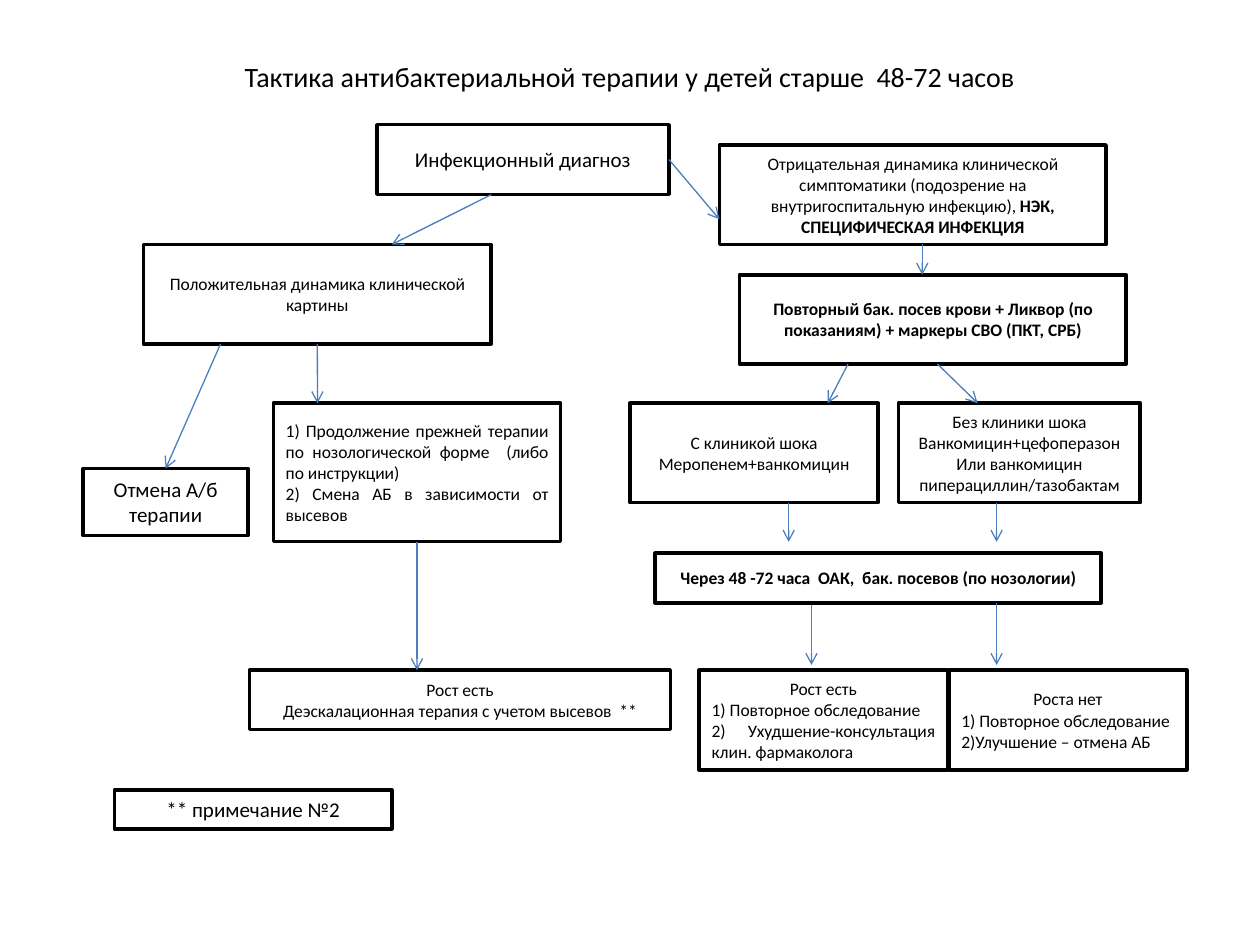
import pptx
import pptx.dml.color
import pptx.enum.shapes
import pptx.enum.text
import pptx.oxml.ns
import pptx.util
from lxml import etree

Pt = pptx.util.Pt
ALIGN = pptx.enum.text.PP_ALIGN
MIDDLE = pptx.enum.text.MSO_ANCHOR.MIDDLE
BLACK = pptx.dml.color.RGBColor(0x00, 0x00, 0x00)
WHITE = pptx.dml.color.RGBColor(0xFF, 0xFF, 0xFF)
BLUE = pptx.dml.color.RGBColor(0x4B, 0x7E, 0xBC)
FONT = "Calibri"
BODY, LARGE = 10, 12
TOP, LEFT, BOTTOM, RIGHT = range(4)

TITLE = "Тактика антибактериальной терапии у детей старше  48-72 часов"
RETEST = "Повторный бак. посев крови + Ликвор (по показаниям) + маркеры СВО (ПКТ, СРБ)"
RECHECK = "Через 48 -72 часа  ОАК,  бак. посевов (по нозологии)"
SEVERE = "НЭК, СПЕЦИФИЧЕСКАЯ ИНФЕКЦИЯ"

# Rows shared by several boxes
CHOICE_TOP, RESULT_TOP, TALL = 230.4, 383, 56.9

# name: (left, top, width, height), font size, paragraphs, bold ending
BOXES = {
    "diagnosis": ((215.3, 71.3, 167, 39.8), LARGE, ["Инфекционный диагноз"], ""),
    "positive": ((82, 139.7, 198.7, TALL), BODY,
                 ["Положительная динамика клинической картины"], ""),
    "negative": ((411.1, 82.8, 221, TALL), BODY,
                 ["Отрицательная динамика клинической симптоматики (подозрение на "
                  "внутригоспитальную инфекцию), " + SEVERE], SEVERE),
    "retest": ((422.6, 157, 221, 51), BODY, [RETEST], RETEST),
    "cancel": ((47.5, 267.8, 94.3, 38.2), LARGE, ["Отмена А/б терапии"], ""),
    "continue": ((156.2, CHOICE_TOP, 164.2, 79.2), BODY,
                 ["1) Продолжение прежней терапии по нозологической форме  "
                  "(либо по инструкции)",
                  "2) Смена АБ в зависимости от высевов"], ""),
    "shock": ((360, CHOICE_TOP, 141.8, TALL), BODY,
              ["С клиникой шока", "Меропенем+ванкомицин"], ""),
    "no shock": ((513.4, CHOICE_TOP, 138.2, TALL), BODY,
                 ["Без клиники шока", "Ванкомицин+цефоперазон",
                  "Или ванкомицин пиперациллин/тазобактам"], ""),
    "recheck": ((374.4, 316.1, 254.9, 28.4), BODY, [RECHECK], RECHECK),
    "de-escalation": ((142.6, RESULT_TOP, 240.5, 33.8), BODY,
                      ["Рост есть", "Деэскалационная терапия с учетом высевов  **"], ""),
    "growth": ((399.6, RESULT_TOP, 141.8, TALL), BODY,
               ["Рост есть", "1) Повторное обследование",
                "2) Ухудшение-консультация клин. фармаколога"], ""),
    "no growth": ((542.2, RESULT_TOP, 136.1, TALL), BODY,
                  ["Роста нет", "1) Повторное обследование",
                   "2)Улучшение – отмена АБ"], ""),
    "note": ((65.5, 451.4, 158.4, 22.3), LARGE, ["** примечание №2"], ""),
}

# start, end, joined start (box, side), joined end (box, side)
ARROWS = [
    ((280.8, 111.2), (223.9, 139.7), None, None),
    ((382.3, 91.2), (411.1, 125.3), ("diagnosis", RIGHT), None),
    ((527, 139.7), (527, 157), None, None),
    ((484.6, 208), (473, CHOICE_TOP), None, None),
    ((535.7, 208), (558.7, CHOICE_TOP), None, None),
    ((126, 196.6), (94.7, 267.8), None, ("cancel", TOP)),
    ((181.4, 196.6), (181.4, CHOICE_TOP), ("positive", BOTTOM), None),
    ((238.3, 309.6), (238.3, RESULT_TOP), ("continue", BOTTOM), None),
    ((450.7, 287.3), (450.7, 309.6), None, None),
    ((569.5, 287.3), (569.5, 309.6), None, None),
    ((463.7, 346), (463.7, 380), None, None),
    ((569.5, 344.5), (569.5, 380), None, None),
]


def format_run(run, size, bold=False):
    run.font.name = FONT
    run.font.size = Pt(size)
    run.font.bold = bold
    run.font.color.rgb = BLACK


def add_title(page):
    title = page.shapes.title
    title.left, title.top, title.width, title.height = map(Pt, (36, 21.6, 648, 44))
    title.text_frame.text = TITLE
    title.text_frame.vertical_anchor = MIDDLE
    para = title.text_frame.paragraphs[0]
    para.alignment = ALIGN.CENTER
    format_run(para.runs[0], 16)


def fill_paragraph(para, text, size, bold_ending):
    """Numbered lines are justified, all others centred."""
    para.alignment = ALIGN.JUSTIFY if text[0].isdigit() else ALIGN.CENTER
    plain = text.removesuffix(bold_ending)
    for part, bold in ((plain, False), (bold_ending, True)):
        if part:
            run = para.add_run()
            run.text = part
            format_run(run, size, bold)


def add_box(page, bounds, size, lines, bold_ending):
    box = page.shapes.add_shape(
        pptx.enum.shapes.MSO_SHAPE.RECTANGLE, *map(Pt, bounds))
    box.shadow.inherit = False
    box.fill.solid()
    box.fill.fore_color.rgb = WHITE
    box.line.color.rgb = BLACK
    box.line.width = Pt(2)
    frame = box.text_frame
    frame.word_wrap = True
    frame.vertical_anchor = MIDDLE
    for index, text in enumerate(lines):
        para = frame.add_paragraph() if index else frame.paragraphs[0]
        fill_paragraph(para, text, size, bold_ending)
    return box


def add_arrow(page, boxes, start, end, start_joint, end_joint):
    arrow = page.shapes.add_connector(
        pptx.enum.shapes.MSO_CONNECTOR.STRAIGHT, *map(Pt, start + end))
    if start_joint:
        name, side = start_joint
        arrow.begin_connect(boxes[name], side)
    if end_joint:
        name, side = end_joint
        arrow.end_connect(boxes[name], side)
    arrow.line.color.rgb = BLUE
    arrow.line.width = Pt(0.75)
    qn = pptx.oxml.ns.qn
    etree.SubElement(arrow.line._get_or_add_ln(), qn("a:tailEnd"), type="arrow")
    etree.SubElement(arrow._element.spPr, qn("a:effectLst"))


def main():
    deck = pptx.Presentation()
    deck.slide_width, deck.slide_height = Pt(720), Pt(540)
    page = deck.slides.add_slide(deck.slide_layouts[5])
    add_title(page)
    boxes = {name: add_box(page, *content) for name, content in BOXES.items()}
    for arrow in ARROWS:
        add_arrow(page, boxes, *arrow)
    deck.save("out.pptx")


if __name__ == "__main__":
    main()
